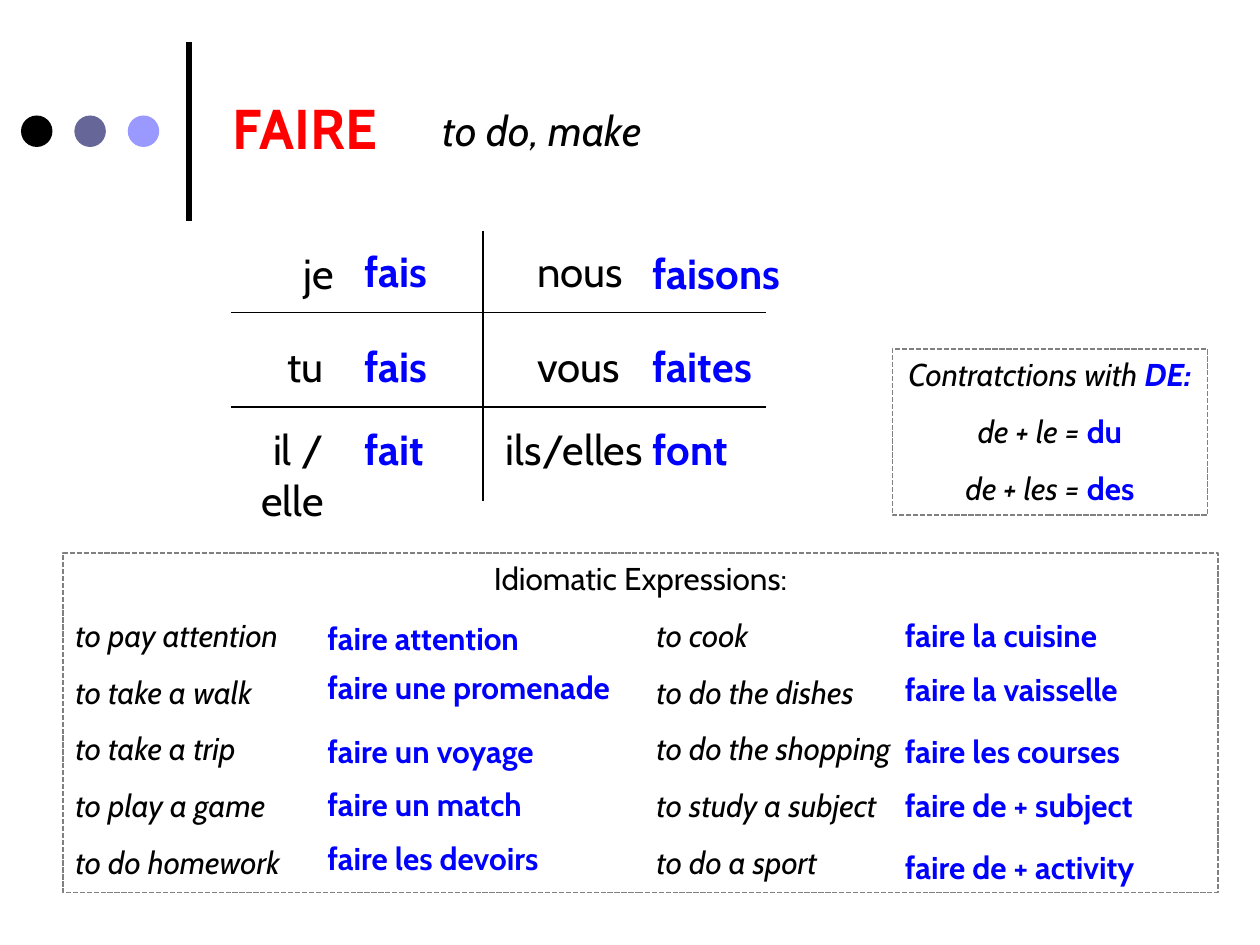
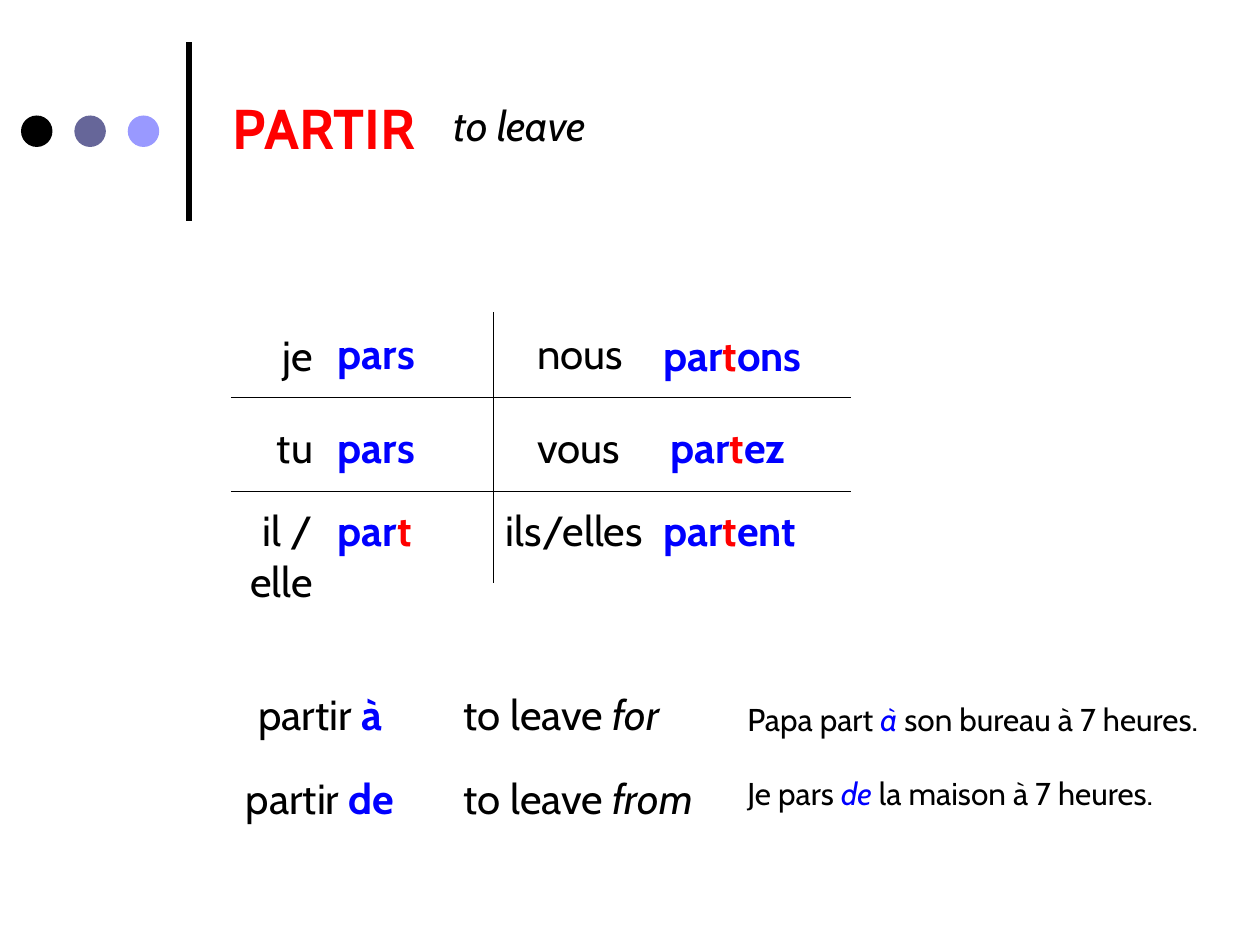
"""Build two French verb slides, FAIRE and PARTIR, with python-pptx."""
from lxml import etree
from pptx import Presentation, dml, util as u
from pptx.dml import color
from pptx.enum import dml as line_styles, shapes, text
from pptx.oxml import ns

FONT = "Cabin"
COLOURS = {
    "black": "000000", "slate": "666699", "lilac": "9999FF",
    "red": "FF0000", "blue": "0000FF", "grey": "808080",
}
STYLES = {
    "plain": ("black", False, False),
    "gloss": ("black", False, True),
    "verb": ("blue", True, False),
    "ending": ("red", True, False),
    "accent": ("blue", False, True),
    "heading": ("blue", True, True),
}
LEFT, CENTER, RIGHT = text.PP_ALIGN.LEFT, text.PP_ALIGN.CENTER, text.PP_ALIGN.RIGHT

ROW_OFFSETS = (5, 59, 106.5)
ROW_STEP = 54
GRID_HEIGHT = 154.5

FAIRE = {
    "title": "FAIRE", "meaning": "to do, make", "meaning_at": (246, 56),
    "top": 132, "rule": 46.5, "rule_end": 438, "divider": 276,
    "columns": [
        (114, 78, RIGHT, "plain", [("je", 6, 1), ("tu", 0, 0), ("il / elle", 0, 0)]),
        (201, 69, LEFT, "verb", [("fais", 0, 0), ("fais", 0, 0), ("fait", 0, 0)]),
        (300, 78, LEFT, "plain", [("nous", 0, 0), ("vous", 0, 0), ("ils/elles", -18, 0)]),
        (366, 114, LEFT, "verb", [("faisons", 0, 1), ("faites", 0, 0), ("font", 0, 0)]),
    ],
}
PARTIR = {
    "title": "PARTIR", "meaning": "to leave", "meaning_at": (252, 53.5),
    "top": 178.5, "rule": 48.5, "rule_end": 486, "divider": 282,
    "columns": [
        (108, 78, RIGHT, "plain", [("je", 0, 1), ("tu", 0, 0), ("il / elle", 0, 0)]),
        (186, 90, LEFT, "verb", [("pars", 0, 0), ("pars", 0, 0),
                                 ([("par", "verb"), ("t", "ending")], 0, 0)]),
        (300, 78, LEFT, "plain", [("nous", 0, 0), ("vous", 0, 0), ("ils/elles", -18, 0)]),
        (372, 144, LEFT, "verb", [
            ([("par", "verb"), ("t", "ending"), ("ons", "verb")], 0, 1),
            ([("par", "verb"), ("t", "ending"), ("ez", "verb")], 4, 0),
            ([("par", "verb"), ("t", "ending"), ("ent", "verb")], 0, 0)]),
    ],
}
CONTRACTIONS = [
    [("Contratctions with ", "gloss"), ("DE:", "heading")],
    [("de + le = ", "gloss"), ("du", "verb")],
    [("de + les = ", "gloss"), ("des", "verb")],
]
IDIOMS = [
    ("to pay attention", "faire attention", 350, "to cook", "faire la cuisine", 348.5),
    ("to take a walk", "faire une promenade", 378, "to do the dishes", "faire la vaisselle", 379.5),
    ("to take a trip", "faire un voyage", 414.5, "to do the shopping", "faire les courses", 414.5),
    ("to play a game", "faire un match", 445, "to study a subject", "faire de + subject", 445.5),
    ("to do homework", "faire les devoirs", 476, "to do a sport", "faire de + activity", 481),
]
USAGES = [
    ("à", "for", 390, 396.5,
     [("Papa part ", "plain"), ("à ", "accent"), ("son bureau à 7 heures.", "plain")]),
    ("de", "from", 438, 439,
     [("Je pars ", "plain"), ("de", "accent"), (" la maison à 7 heures.", "plain")]),
]


def rgb(name):
    return color.RGBColor.from_string(COLOURS[name])


def fill_paragraph(para, content, style="plain", size=24, align=LEFT, after=0):
    para.alignment = align
    para.space_after = u.Pt(after)
    spans = [(content, style)] if isinstance(content, str) else content
    for words, span_style in spans:
        span = para.add_run()
        span.text = words
        hue, span.font.bold, span.font.italic = STYLES[span_style]
        span.font.name, span.font.size = FONT, u.Pt(size)
        span.font.color.rgb = rgb(hue)


def add_text(page, content, left, top, width, **style):
    height = style.get("size", 24) * 1.22 + 7.2
    box = page.shapes.add_textbox(u.Pt(left), u.Pt(top), u.Pt(width), u.Pt(height))
    box.text_frame.word_wrap = True
    fill_paragraph(box.text_frame.paragraphs[0], content, **style)


def add_line(page, x1, y1, x2, y2, weight=0.75):
    line = page.shapes.add_connector(
        shapes.MSO_CONNECTOR.STRAIGHT, u.Pt(x1), u.Pt(y1), u.Pt(x2), u.Pt(y2))
    line.line.color.rgb = rgb("black")
    line.line.width = u.Pt(weight)
    etree.SubElement(line.element.spPr, ns.qn("a:effectLst"))


def add_panel(page, left, top, width, height):
    panel = page.shapes.add_shape(
        shapes.MSO_SHAPE.RECTANGLE, u.Pt(left), u.Pt(top), u.Pt(width), u.Pt(height))
    panel.shadow.inherit = False
    panel.fill.background()
    panel.line.color.rgb = rgb("grey")
    panel.line.width = u.Pt(1)
    panel.line.dash_style = line_styles.MSO_LINE.SQUARE_DOT
    frame = panel.text_frame
    frame.word_wrap = True
    frame.vertical_anchor = text.MSO_ANCHOR.TOP
    return frame


def add_panel_lines(frame, lines):
    for index, (content, style, align) in enumerate(lines):
        para = frame.paragraphs[0] if index == 0 else frame.add_paragraph()
        fill_paragraph(para, content, style=style, size=18, align=align, after=10.8)


def add_verb_page(deck, verb):
    page = deck.slides.add_slide(deck.slide_layouts[6])
    add_line(page, 108, 126, 108, 24, weight=3)
    for index, hue in enumerate(("black", "slate", "lilac")):
        dot = page.shapes.add_shape(
            shapes.MSO_SHAPE.OVAL, u.Pt(12 + 30.5 * index), u.Pt(66), u.Pt(18), u.Pt(18))
        dot.shadow.inherit = False
        dot.fill.solid()
        dot.fill.fore_color.rgb = rgb(hue)
        dot.line.fill.background()
    add_text(page, verb["title"], 126, 50, 156, style="ending", size=32)
    add_text(page, verb["meaning"], *verb["meaning_at"], 150, style="gloss")

    top = verb["top"]
    for index in range(2):
        y = top + verb["rule"] + ROW_STEP * index
        add_line(page, 132, y, verb["rule_end"], y)
    add_line(page, verb["divider"], top, verb["divider"], top + GRID_HEIGHT)
    for left, width, align, style, cells in verb["columns"]:
        for offset, (content, dx, dy) in zip(ROW_OFFSETS, cells):
            add_text(page, content, left + dx, top + offset + dy, width - min(dx, 0),
                     style=style, align=align)
    return page


def add_contractions(page):
    frame = add_panel(page, 510, 199.5, 180, 95)
    add_panel_lines(frame, [(spans, "gloss", CENTER) for spans in CONTRACTIONS])


def add_idioms(page):
    frame = add_panel(page, 36, 316, 660, 194)
    lines = [(f"{first}\t{second}", "gloss", LEFT) for first, _, _, second, _, _ in IDIOMS]
    add_panel_lines(frame, [("Idiomatic Expressions:", "plain", CENTER)] + lines)
    for para in frame.paragraphs[1:]:
        tabs = etree.SubElement(para._p.get_or_add_pPr(), ns.qn("a:tabLst"))
        etree.SubElement(tabs, ns.qn("a:tab"), pos=str(u.Pt(332)), algn="l")
    for _, first, first_top, _, second, second_top in IDIOMS:
        add_text(page, first, 180, first_top, 186, style="verb", size=18)
        add_text(page, second, 510, second_top, 186, style="verb", size=18)


def add_usages(page):
    for preposition, meaning, top, example_top, example in USAGES:
        add_text(page, [("partir", "plain"), (f" {preposition}", "verb")],
                 102, top, 162, align=CENTER)
        add_text(page, [("to leave ", "plain"), (meaning, "gloss")], 258, top, 162)
        add_text(page, example, 420, example_top, 294, size=18)


def main():
    deck = Presentation()
    deck.slide_width, deck.slide_height = u.Pt(720), u.Pt(540)
    faire_page = add_verb_page(deck, FAIRE)
    add_contractions(faire_page)
    add_idioms(faire_page)
    add_usages(add_verb_page(deck, PARTIR))
    deck.save("out.pptx")


if __name__ == "__main__":
    main()
